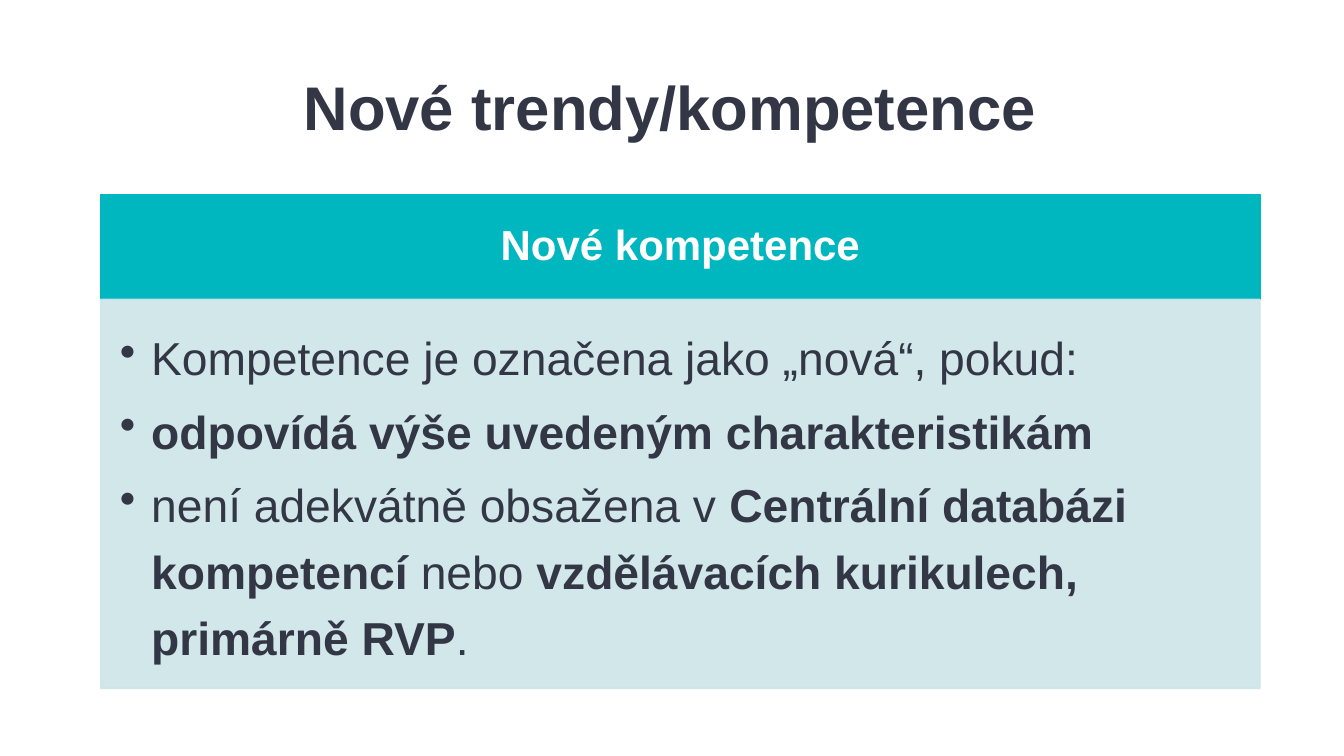
from lxml.etree import SubElement
from pptx import Presentation
from pptx.dml.color import RGBColor
from pptx.enum.shapes import MSO_SHAPE as Shape
from pptx.enum.text import MSO_ANCHOR as Anchor, PP_ALIGN as Align
from pptx.oxml.ns import qn
from pptx.util import Inches, Pt

COLORS = {"ink": "333745", "teal": "00B6BF", "mist": "CCE5E8", "white": "FFFFFF"}
COLUMNS, ROWS = 40, 30
LEFT, WIDTH = 3, 34.5
HEAD_TOP, HEAD_ROWS, BODY_ROWS = 7.72, 4.16, 15.44
POINTS = [
    [("Kompetence je označena jako „nová“, pokud:", False)],
    [("odpovídá výše uvedeným charakteristikám", True)],
    [
        ("není adekvátně obsažena v ", False),
        ("Centrální databázi kompetencí", True),
        (" nebo ", False),
        ("vzdělávacích kurikulech, primárně RVP", True),
        (".", False),
    ],
]


class SlideBuilder:
    """Places styled elements on a grid of the current slide."""

    def __init__(self, deck):
        self.page = deck.slides.add_slide(deck.slide_layouts[5])
        self.column = deck.slide_width / COLUMNS
        self.row = deck.slide_height / ROWS

    def place(self, left, top, width, height):
        return (round(left * self.column), round(top * self.row),
                round(width * self.column), round(height * self.row))

    def style(self, para, size, color, spacing, bold=None):
        para.font.name, para.font.size, para.font.bold = "Arial", Pt(size), bold
        para.font.color.rgb = RGBColor.from_string(COLORS[color])
        para.line_spacing = spacing

    def heading(self, frame, text, size, color):
        frame.word_wrap = True
        frame.vertical_anchor = Anchor.MIDDLE
        para = frame.paragraphs[0]
        para.text = text
        para.alignment = Align.CENTER
        self.style(para, size, color, 0.9, bold=True)

    def title(self, text, *area):
        box = self.page.shapes.title
        box.left, box.top, box.width, box.height = self.place(*area)
        self.heading(box.text_frame, text, 44, "ink")

    def panel(self, color, *area, margins, opacity=100):
        box = self.page.shapes.add_shape(Shape.RECTANGLE, *self.place(*area))
        box.shadow.inherit = False
        box.fill.solid()
        box.line.width = Pt(1)
        for paint in (box.fill, box.line.fill):
            paint.solid()
            paint.fore_color.rgb = RGBColor.from_string(COLORS[color])
        if opacity < 100:
            for tint in box._element.spPr.iter(qn("a:srgbClr")):
                SubElement(tint, qn("a:alpha"), val=str(opacity * 1000))
        frame = box.text_frame
        frame.word_wrap = True
        (frame.margin_left, frame.margin_top,
         frame.margin_right, frame.margin_bottom) = map(Inches, margins)
        return frame

    def bullets(self, frame, points):
        frame.vertical_anchor = Anchor.TOP
        for index, point in enumerate(points):
            para = frame.add_paragraph() if index else frame.paragraphs[0]
            para.alignment = Align.LEFT
            para.level = 1
            self.style(para, 33, "ink", 1.2)
            para.space_after = Pt(5)
            properties = para._p.get_or_add_pPr()
            properties.set("marL", str(Inches(0.31)))
            properties.set("indent", str(-Inches(0.31)))
            bullet = properties.makeelement(qn("a:buChar"), {"char": "•"})
            properties.find(qn("a:defRPr")).addprevious(bullet)
            for text, bold in point:
                span = para.add_run()
                span.text = text
                span.font.bold = bold


def main():
    deck = Presentation()
    deck.slide_width, deck.slide_height = Inches(13.33), Inches(7.5)
    builder = SlideBuilder(deck)
    builder.title("Nové trendy/kompetence", 2.7, 2.12, WIDTH, 4.56)
    header = builder.panel("teal", LEFT, HEAD_TOP, WIDTH, HEAD_ROWS,
                           margins=(0.23, 0.13, 0.23, 0.13))
    builder.heading(header, "Nové kompetence", 30, "white")
    body = builder.panel("mist", LEFT, HEAD_TOP + HEAD_ROWS, WIDTH, BODY_ROWS,
                         margins=(0.19, 0.19, 0.26, 0.29), opacity=90)
    builder.bullets(body, POINTS)
    deck.save("out.pptx")


if __name__ == "__main__":
    main()
